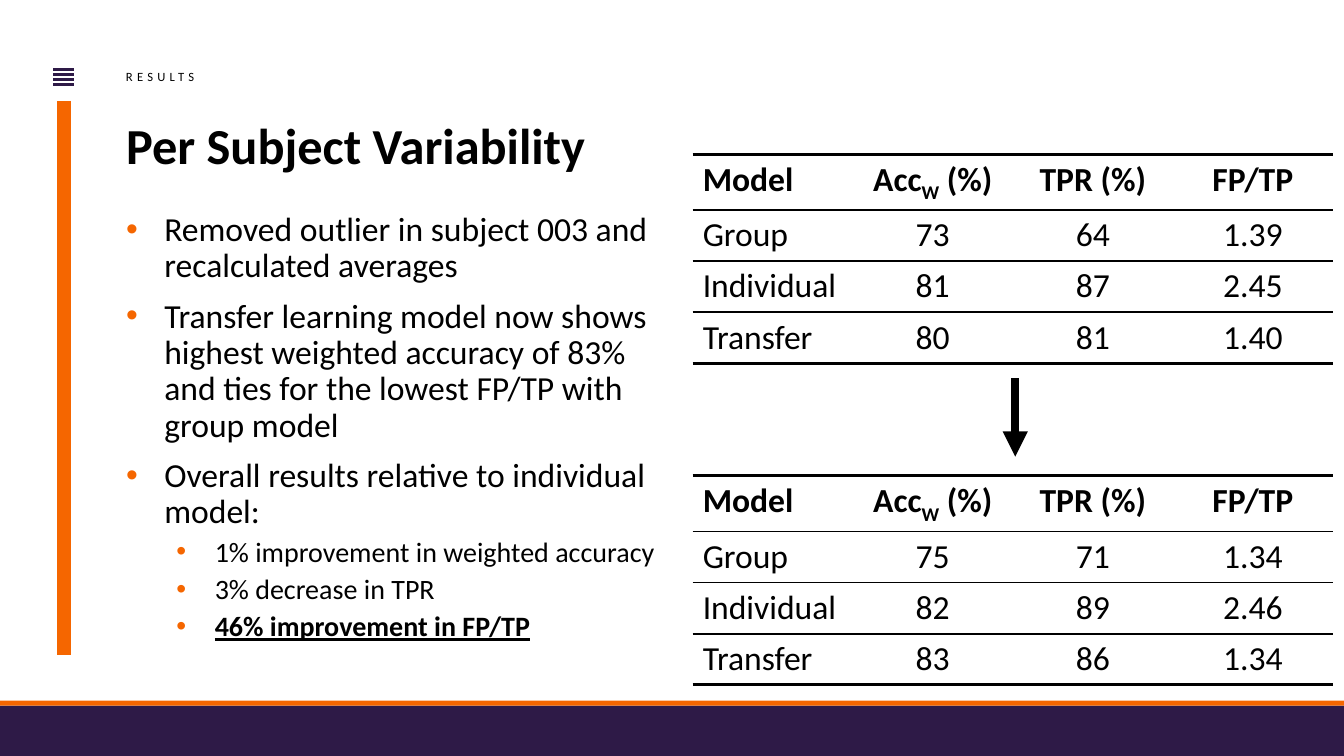
from lxml import etree
from pptx import Presentation
from pptx.dml.color import RGBColor
from pptx.enum.shapes import MSO_CONNECTOR, MSO_SHAPE
from pptx.enum.text import MSO_ANCHOR, MSO_AUTO_SIZE, PP_ALIGN
from pptx.oxml.ns import qn
from pptx.util import Inches, Pt

STRAIGHT = MSO_CONNECTOR.STRAIGHT
RECTANGLE = MSO_SHAPE.RECTANGLE
TOP = MSO_ANCHOR.TOP
NO_AUTOFIT = MSO_AUTO_SIZE.NONE
LEFT = PP_ALIGN.LEFT
CENTER = PP_ALIGN.CENTER

PURPLE = RGBColor(0x2E, 0x1A, 0x47)
ORANGE = RGBColor(0xF5, 0x66, 0x00)
BLACK = RGBColor(0x00, 0x00, 0x00)

NO_STYLE_NO_GRID = "{2D5ABB26-0587-4C30-8999-92F81FD0307C}"
FRAME = {"margin_left": 0, "margin_top": 0, "margin_right": 0, "margin_bottom": 0,
         "word_wrap": True, "auto_size": NO_AUTOFIT, "vertical_anchor": TOP}
TITLE_FONT = {"name": "Calibri", "size": Pt(36), "bold": True}
SECTION_FONT = {"name": "Calibri", "size": Pt(9)}
BULLET_FONTS = [{"name": "Calibri", "size": Pt(24)}, {"name": "Calibri", "size": Pt(20)}]
EMPHASIS = {"bold": True, "underline": True}
BULLET_INDENTS = [0.38, 0.88]
BULLET_SPACES = [10, 5]

FINDINGS = [
    (0, "Removed outlier in subject 003 and recalculated averages", {}),
    (0, "Transfer learning model now shows highest weighted accuracy of 83% "
        "and ties for the lowest FP/TP with group model", {}),
    (0, "Overall results relative to individual model:", {}),
    (1, "1% improvement in weighted accuracy", {}),
    (1, "3% decrease in TPR", {}),
    (1, "46% improvement in FP/TP", EMPHASIS),
]
HEADER = [["Model"], ["Acc", "W", " (%)"], ["TPR (%)"], ["FP/TP"]]
WITH_OUTLIER = [("Group", "73", "64", "1.39"),
                ("Individual", "81", "87", "2.45"),
                ("Transfer", "80", "81", "1.40")]
WITHOUT_OUTLIER = [("Group", "75", "71", "1.34"),
                   ("Individual", "82", "89", "2.46"),
                   ("Transfer", "83", "86", "1.34")]
RULES = [{"lnT": 2.25, "lnB": 1.5}, {"lnT": 1.5, "lnB": 1.5},
         {"lnT": 1.5}, {"lnB": 2.25}]


def apply(target, values):
    for name, value in values.items():
        setattr(target, name, value)


def format_font(font, values):
    apply(font, values)
    font.color.rgb = BLACK


def place(part, box):
    apply(part, dict(zip(("left", "top", "width", "height"), map(Inches, box))))
    apply(part.text_frame, FRAME)


def add_rule(shapes, start, end, color, weight):
    rule = shapes.add_connector(STRAIGHT, *map(Inches, start + end))
    rule.line.color.rgb = color
    rule.line.width = Pt(weight)
    etree.SubElement(rule._element.spPr, qn("a:effectLst"))
    return rule


def add_margin_marks(slide, box):
    left, top, width, height = box
    menu = slide.shapes.add_group_shape()
    for step in range(4):
        y = top + step * 0.05
        add_rule(menu.shapes, (left, y), (left + width, y), PURPLE, 1.75)
    center = left + width / 2
    add_rule(slide.shapes, (center, top + 0.31), (center, top + height), ORANGE, 10)


def add_footer(slide, box):
    left, top, width, height = box
    for y, band_height, color in ((top + 0.05, height - 0.05, PURPLE), (top, 0.05, ORANGE)):
        band = slide.shapes.add_shape(
            RECTANGLE, *map(Inches, (left, y, width, band_height)))
        band.shadow.inherit = False
        band.fill.solid()
        band.fill.fore_color.rgb = color
        band.line.fill.background()


def add_heading(slide, box):
    left, top, width, height = box
    section = slide.shapes.add_textbox(0, 0, 0, 0)
    place(section, (left, top, 4.17, 0.14))
    title = slide.shapes.title
    place(title, (left, top + 0.55, width, height - 0.55))
    for part, text, font, spacing in ((section, "RESULTS", SECTION_FONT, 0.9),
                                      (title, "Per Subject Variability", TITLE_FONT, 0.8)):
        paragraph = part.text_frame.paragraphs[0]
        apply(paragraph, {"alignment": LEFT, "line_spacing": spacing})
        run = paragraph.add_run()
        run.text = text
        format_font(run.font, font)
    section.text_frame.paragraphs[0].runs[0].font._element.set("spc", "300")


def add_bullet(paragraph, level):
    properties = paragraph._p.get_or_add_pPr()
    properties.set("marL", str(Inches(BULLET_INDENTS[level])))
    properties.set("indent", str(Inches(-0.38)))
    color = etree.SubElement(properties, qn("a:buClr"))
    etree.SubElement(color, qn("a:srgbClr"), val=str(ORANGE))
    etree.SubElement(properties, qn("a:buFont"), typeface="Arial")
    etree.SubElement(properties, qn("a:buChar"), char="•")


def add_findings(slide, box):
    findings = slide.placeholders[1]
    place(findings, box)
    frame = findings.text_frame
    for index, (level, text, emphasis) in enumerate(FINDINGS):
        paragraph = frame.add_paragraph() if index else frame.paragraphs[0]
        add_bullet(paragraph, level)
        apply(paragraph, {"level": level, "alignment": LEFT, "line_spacing": 0.9,
                          "space_before": Pt(BULLET_SPACES[level] if index else 0)})
        run = paragraph.add_run()
        run.text = text
        format_font(run.font, BULLET_FONTS[level] | emphasis)


def add_borders(cell, rules):
    properties = cell._tc.get_or_add_tcPr()
    for side, weight in rules.items():
        border = etree.SubElement(properties, qn(f"a:{side}"), w=str(Pt(weight)))
        fill = etree.SubElement(border, qn("a:solidFill"))
        etree.SubElement(fill, qn("a:srgbClr"), val=str(BLACK))
    cell.fill.background()


def add_scores(slide, box, scores):
    rows = [HEADER] + [[[value] for value in row] for row in scores]
    table = slide.shapes.add_table(len(rows), len(HEADER), *map(Inches, box)).table
    apply(table, {"first_row": False, "horz_banding": False})
    table._tbl.tblPr.find(qn("a:tableStyleId")).text = NO_STYLE_NO_GRID
    for row_index, row in enumerate(rows):
        for column, pieces in enumerate(row):
            cell = table.cell(row_index, column)
            paragraph = cell.text_frame.paragraphs[0]
            paragraph.alignment = CENTER if column else LEFT
            for piece in pieces:
                run = paragraph.add_run()
                run.text = piece
                format_font(run.font, {"name": "Calibri", "size": Pt(24),
                                       "bold": row_index == 0})
                if piece == "W":
                    run.font._element.set("baseline", "-25000")
            add_borders(cell, RULES[row_index])


def add_results(slide, box):
    left, top, width, height = box
    add_scores(slide, (left, top, width, 2), WITH_OUTLIER)
    arrow_x = left + 3.2
    arrow = add_rule(slide.shapes, (arrow_x, top + 2.22), (arrow_x, top + 3), BLACK, 6)
    etree.SubElement(arrow.line._get_or_add_ln(), qn("a:tailEnd"), type="triangle")
    add_scores(slide, (left, top + height - 2, width, 2), WITHOUT_OUTLIER)


def main():
    deck = Presentation()
    deck.slide_width = Inches(13.33)
    deck.slide_height = Inches(7.5)
    slide = deck.slides.add_slide(deck.slide_layouts[1])
    add_margin_marks(slide, (0.53, 0.69, 0.2, 5.81))
    add_footer(slide, (0, 6.95, 13.33, 0.55))
    add_findings(slide, (1.25, 2.11, 5.42, 4.65))
    add_heading(slide, (1.25, 0.7, 9.43, 1.05))
    add_results(slide, (6.87, 1.53, 6.35, 5.19))
    deck.save("out.pptx")


if __name__ == "__main__":
    main()
